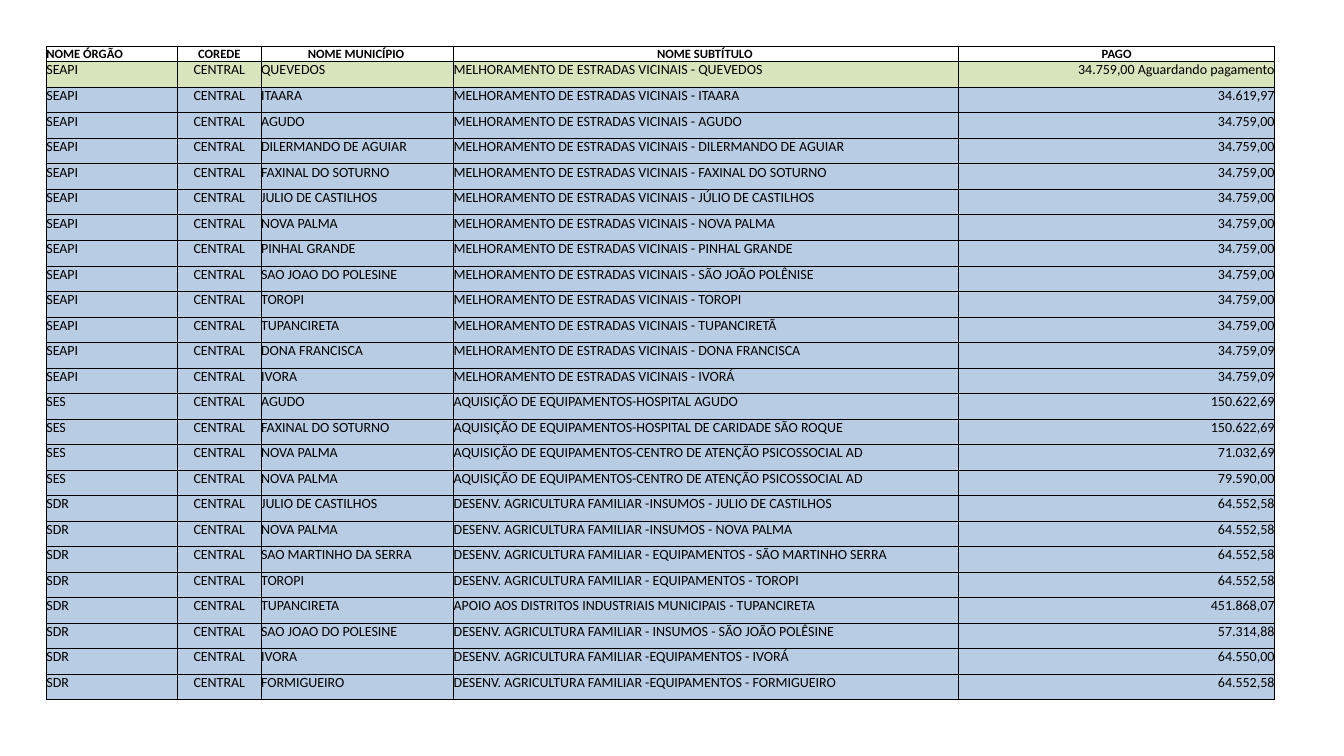
from dataclasses import dataclass

from lxml.etree import SubElement
from pptx import Presentation
from pptx.dml.color import RGBColor
from pptx.enum.text import MSO_ANCHOR as Anchor, PP_ALIGN as Align
from pptx.oxml.ns import qn
from pptx.util import Inches, Pt


@dataclass(frozen=True)
class Theme:
    """Colours, font and sizes of the slide."""
    font: str = "Calibri"
    ink: str = "000000"
    header_fill: str = "FFFFFF"
    pending_fill: str = "D7E4BC"
    paid_fill: str = "B8CCE4"
    header_size: float = 9
    body_size: float = 10
    border: float = 0.5


THEME = Theme()
REGION = "CENTRAL"
ROADS = "MELHORAMENTO DE ESTRADAS VICINAIS - "
SUPPLIES = "AQUISIÇÃO DE EQUIPAMENTOS-"
FARMING = "DESENV. AGRICULTURA FAMILIAR -"
PENDING = "Aguardando pagamento"

COLUMNS = [
    ("NOME ÓRGÃO", 1.3, Align.LEFT),
    ("COREDE", 0.83, Align.CENTER),
    ("NOME MUNICÍPIO ", 1.91, Align.LEFT),
    ("NOME SUBTÍTULO ", 5.01, Align.LEFT),
    ("PAGO", 3.13, Align.RIGHT),
]

PAYMENTS = {
    "SEAPI": [
        ("QUEVEDOS", ROADS + "QUEVEDOS", f"34.759,00 {PENDING}"),
        ("ITAARA", ROADS + "ITAARA", "34.619,97"),
        ("AGUDO", ROADS + "AGUDO", "34.759,00"),
        ("DILERMANDO DE AGUIAR", ROADS + "DILERMANDO DE AGUIAR", "34.759,00"),
        ("FAXINAL DO SOTURNO", ROADS + "FAXINAL DO SOTURNO", "34.759,00"),
        ("JULIO DE CASTILHOS", ROADS + "JÚLIO DE CASTILHOS", "34.759,00"),
        ("NOVA PALMA", ROADS + "NOVA PALMA", "34.759,00"),
        ("PINHAL GRANDE", ROADS + "PINHAL GRANDE", "34.759,00"),
        ("SAO JOAO DO POLESINE", ROADS + "SÃO JOÃO POLÊNISE", "34.759,00"),
        ("TOROPI", ROADS + "TOROPI", "34.759,00"),
        ("TUPANCIRETA", ROADS + "TUPANCIRETÃ", "34.759,00"),
        ("DONA FRANCISCA", ROADS + "DONA FRANCISCA", "34.759,09"),
        ("IVORA", ROADS + "IVORÁ", "34.759,09"),
    ],
    "SES": [
        ("AGUDO", SUPPLIES + "HOSPITAL AGUDO", "150.622,69"),
        ("FAXINAL DO SOTURNO", SUPPLIES + "HOSPITAL DE CARIDADE SÃO ROQUE", "150.622,69"),
        ("NOVA PALMA", SUPPLIES + "CENTRO DE ATENÇÃO PSICOSSOCIAL AD", "71.032,69"),
        ("NOVA PALMA", SUPPLIES + "CENTRO DE ATENÇÃO PSICOSSOCIAL AD", "79.590,00"),
    ],
    "SDR": [
        ("JULIO DE CASTILHOS", FARMING + "INSUMOS - JULIO DE CASTILHOS", "64.552,58"),
        ("NOVA PALMA", FARMING + "INSUMOS - NOVA PALMA", "64.552,58"),
        ("SAO MARTINHO DA SERRA", FARMING + " EQUIPAMENTOS - SÃO MARTINHO SERRA", "64.552,58"),
        ("TOROPI", FARMING + " EQUIPAMENTOS - TOROPI", "64.552,58"),
        ("TUPANCIRETA", "APOIO AOS DISTRITOS INDUSTRIAIS MUNICIPAIS - TUPANCIRETA", "451.868,07"),
        ("SAO JOAO DO POLESINE", FARMING + " INSUMOS - SÃO JOÃO POLÊSINE", "57.314,88"),
        ("IVORA", FARMING + "EQUIPAMENTOS - IVORÁ", "64.550,00"),
        ("FORMIGUEIRO", FARMING + "EQUIPAMENTOS - FORMIGUEIRO", "64.552,58"),
    ],
}


def draw_borders(cell):
    """Draw a thin line on all four sides of a cell."""
    properties = cell._tc.get_or_add_tcPr()
    for side in ("lnL", "lnR", "lnT", "lnB"):
        line = SubElement(properties, qn(f"a:{side}"), w=str(Pt(THEME.border)))
        fill = SubElement(line, qn("a:solidFill"))
        SubElement(fill, qn("a:srgbClr"), val=THEME.ink)


def write_cell(cell, text, *, fill, size=THEME.body_size, bold=False,
               align=Align.LEFT, anchor=Anchor.TOP):
    """Fill a cell with formatted text, borders and a background."""
    cell.margin_left = cell.margin_right = cell.margin_top = cell.margin_bottom = 0
    cell.vertical_anchor = anchor
    draw_borders(cell)
    cell.fill.solid()
    cell.fill.fore_color.rgb = RGBColor.from_string(fill)
    para = cell.text_frame.paragraphs[0]
    para.alignment = align
    span = para.add_run()
    span.text = text
    span.font.name = THEME.font
    span.font.size = Pt(size)
    span.font.bold = bold
    span.font.color.rgb = RGBColor.from_string(THEME.ink)


def add_payments_table(page, left, top, height, header_height):
    """Place the table of payments by agency and municipality."""
    records = [(agency, REGION, *payment)
               for agency, payments in PAYMENTS.items() for payment in payments]
    width = sum(column_width for _, column_width, _ in COLUMNS)
    table = page.shapes.add_table(
        len(records) + 1, len(COLUMNS),
        Inches(left), Inches(top), Inches(width), Inches(height)).table
    row_height = (height - header_height) / len(records)
    for index, row in enumerate(table.rows):
        row.height = Inches(row_height if index else header_height)

    for column, (title, column_width, align) in enumerate(COLUMNS):
        table.columns[column].width = Inches(column_width)
        write_cell(table.cell(0, column), title, fill=THEME.header_fill,
                   size=THEME.header_size, bold=True,
                   align=Align.CENTER if column else Align.LEFT,
                   anchor=Anchor.BOTTOM if column else Anchor.TOP)
        for row, record in enumerate(records, start=1):
            pending = record[-1].endswith(PENDING)
            write_cell(table.cell(row, column), record[column], align=align,
                       fill=THEME.pending_fill if pending else THEME.paid_fill)


def main():
    """Build the deck and save it."""
    deck = Presentation()
    deck.slide_width, deck.slide_height = Inches(13.33), Inches(7.5)
    page = deck.slides.add_slide(deck.slide_layouts[6])
    add_payments_table(page, left=0.46, top=0.46, height=6.46, header_height=0.13)
    deck.save("out.pptx")


if __name__ == "__main__":
    main()
